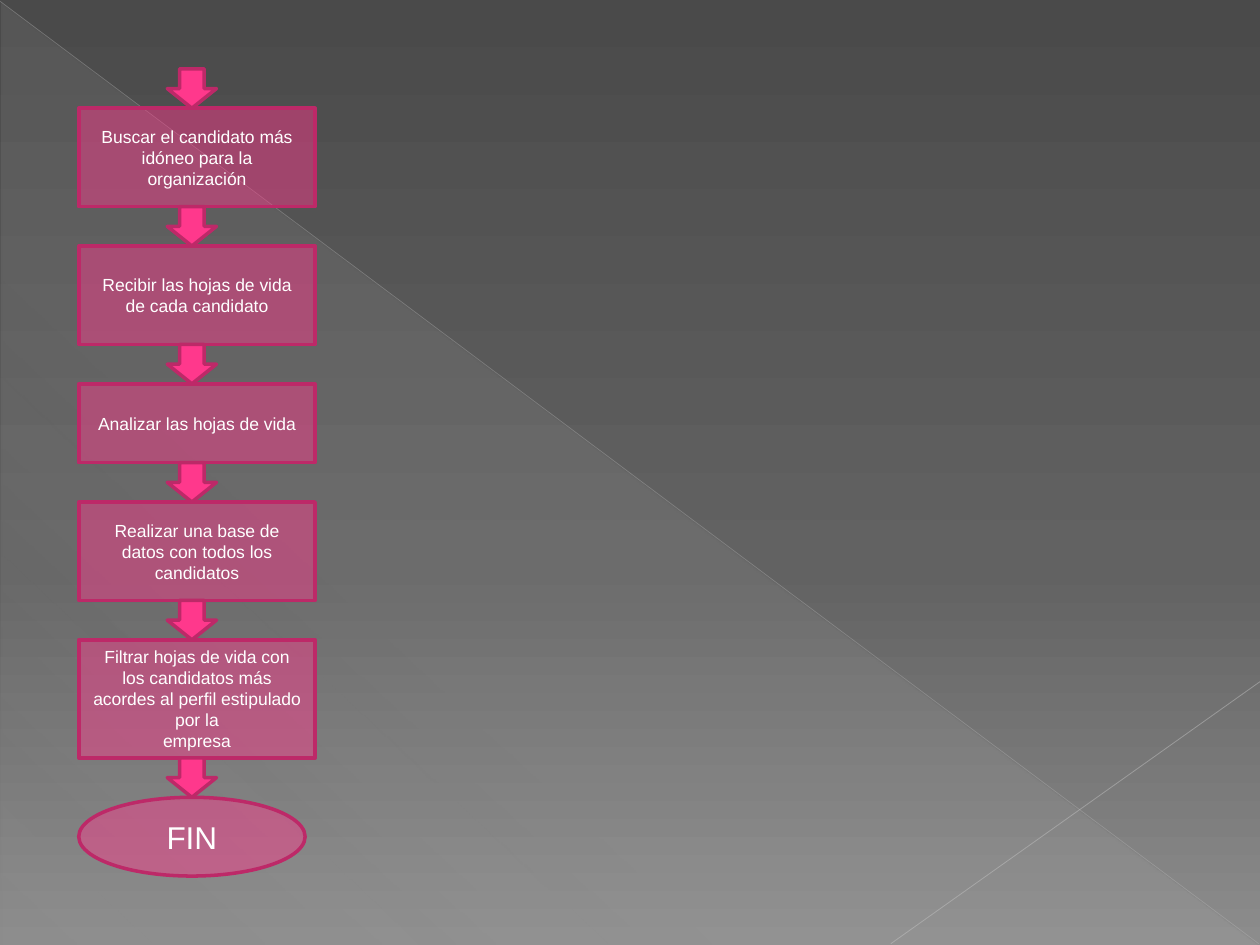
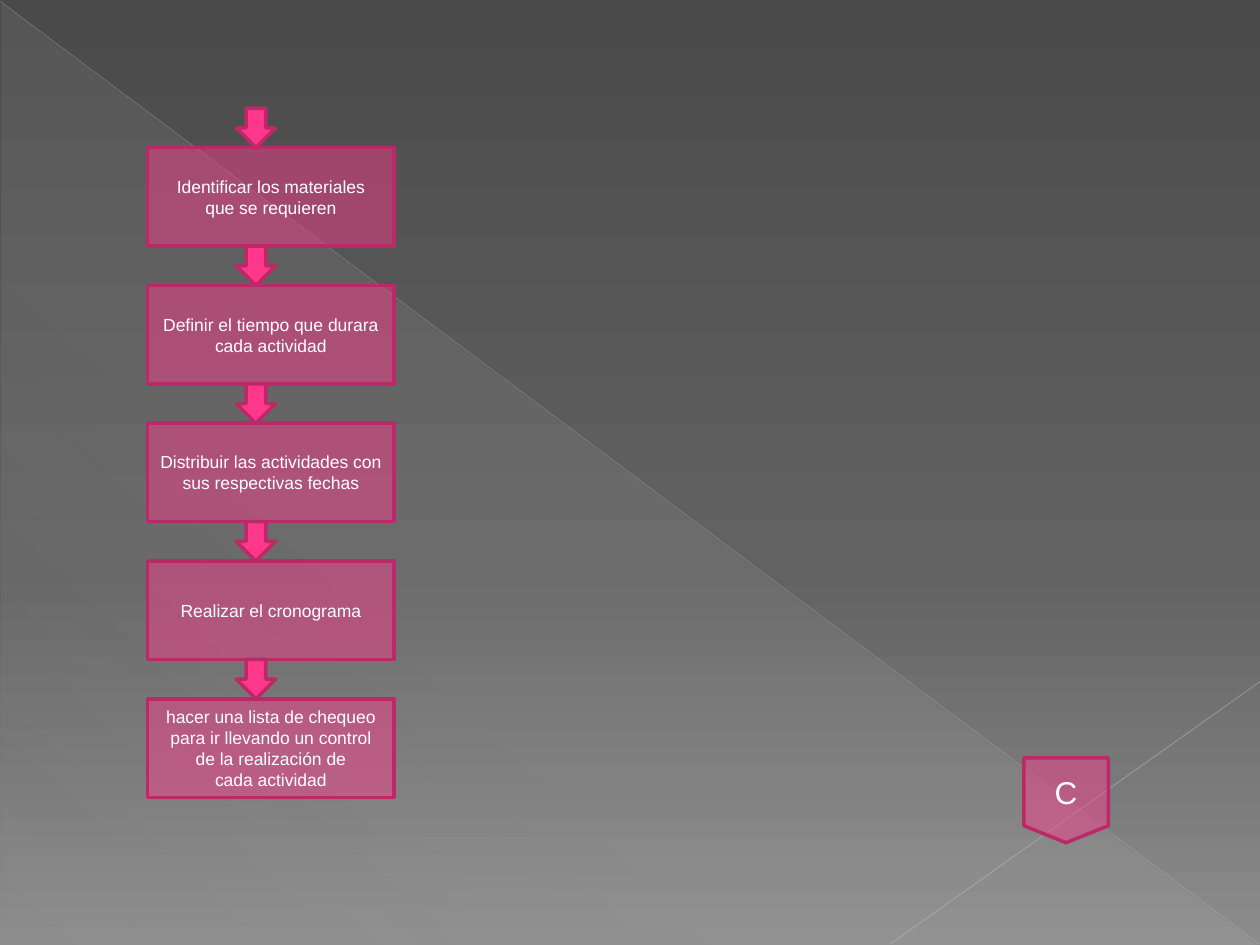
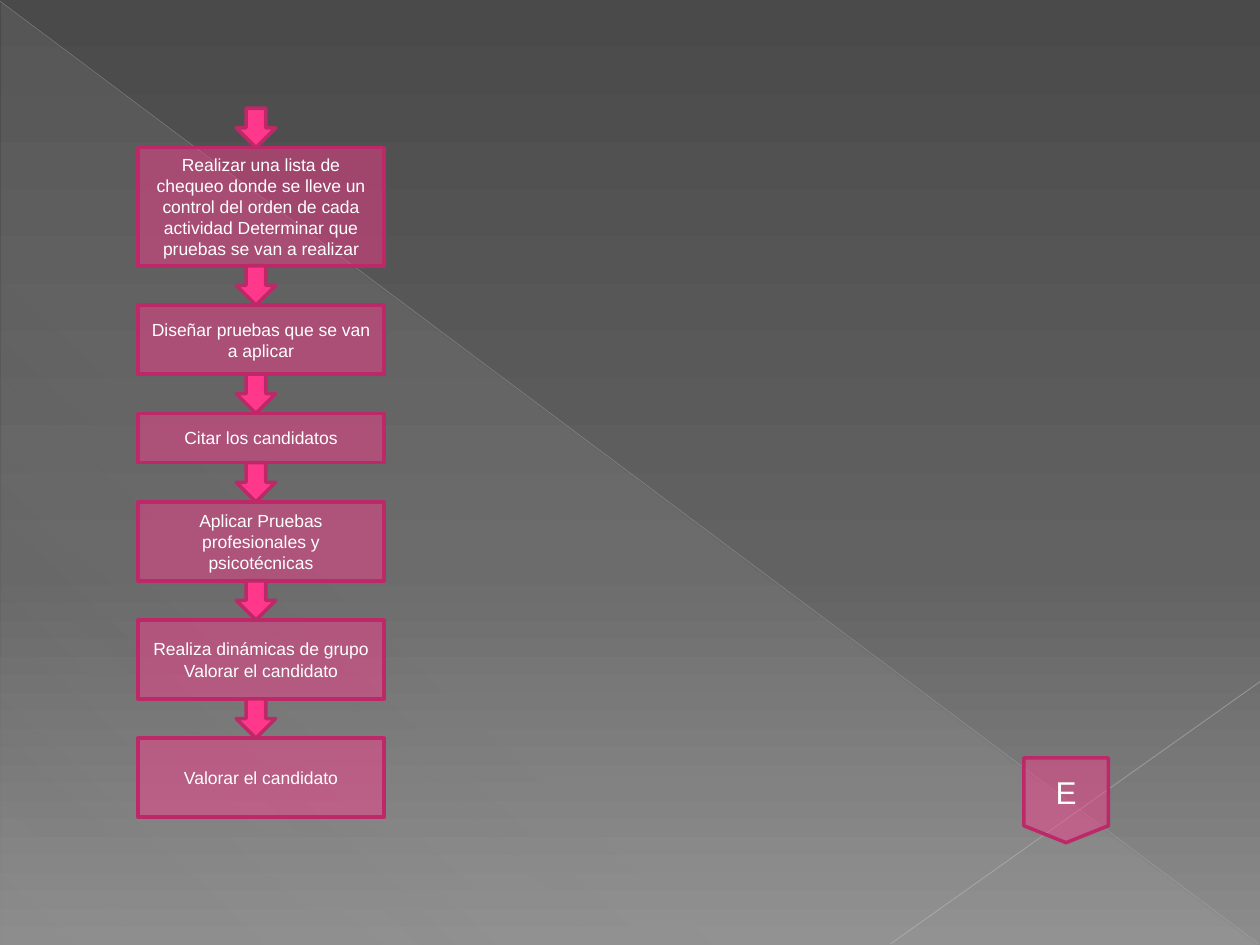
from lxml import etree
from pptx import Presentation
from pptx import util as u
from pptx.dml.color import RGBColor
from pptx.enum import shapes, text
from pptx.oxml.ns import qn

PINK, DARK_PINK, WHITE = "FF388C", "BD2968", "FFFFFF"
BOX_OPACITY = 46
GRID = 10 / 128  # inches per layout unit
ARROW_HEIGHT = 4  # layout units

PROCESS = shapes.MSO_SHAPE.FLOWCHART_PROCESS
OVAL = shapes.MSO_SHAPE.FLOWCHART_CONNECTOR
OFFPAGE = shapes.MSO_SHAPE.FLOWCHART_OFFPAGE_CONNECTOR
ARROW = shapes.MSO_SHAPE.DOWN_ARROW

# Each flow is placed in layout units; a step is (height, wording)
FLOWS = [
    {"top": 7, "box_left": 8, "box_width": 24, "arrow_left": 17, "arrow_width": 5,
     "end": "FIN", "page_mark": None,
     "steps": [
         (10, "Buscar el candidato más idóneo para la organización"),
         (10, "Recibir las hojas de vida de cada candidato"),
         (8, "Analizar las hojas de vida"),
         (10, "Realizar una base de datos con todos los candidatos"),
         (12, "Filtrar hojas de vida con los candidatos más acordes al perfil "
              "estipulado por la\nempresa"),
     ]},
    {"top": 11, "box_left": 15, "box_width": 25, "arrow_left": 24, "arrow_width": 4,
     "end": None, "page_mark": "C",
     "steps": [
         (10, "Identificar los materiales que se requieren"),
         (10, "Definir el tiempo que durara cada actividad"),
         (10, "Distribuir las actividades con sus respectivas fechas"),
         (10, "Realizar el cronograma"),
         (10, "hacer una lista de chequeo para ir llevando un control de la "
              "realización de\ncada actividad"),
     ]},
    {"top": 11, "box_left": 14, "box_width": 25, "arrow_left": 24, "arrow_width": 4,
     "end": None, "page_mark": "E",
     "steps": [
         (12, "Realizar una lista de chequeo donde se lleve un control del orden "
              "de cada\nactividad Determinar que pruebas se van a realizar"),
         (7, "Diseñar pruebas que se van a aplicar"),
         (5, "Citar los candidatos"),
         (8, "Aplicar Pruebas profesionales y psicotécnicas"),
         (8, "Realiza dinámicas de grupo Valorar el candidato"),
         (8, "Valorar el candidato"),
     ]},
]


def paint(fill, stops, angle=0):
    """Fill with one (color, opacity), or a gradient of (color, opacity, position)."""
    if len(stops) == 1:
        fill.solid()
        fill.fore_color.rgb = RGBColor.from_string(stops[0][0])
        colors = [fill._xPr.find(qn("a:solidFill"))[0]]
    else:
        fill.gradient()
        fill.gradient_angle = 360 - angle
        stop_list = fill._xPr.find(qn("a:gradFill")).find(qn("a:gsLst"))
        stop_list.clear()
        colors = []
        for color, opacity, position in stops:
            stop = etree.SubElement(stop_list, qn("a:gs"), pos=str(position * 1000))
            colors.append(etree.SubElement(stop, qn("a:srgbClr"), val=color))
    for element, stop in zip(colors, stops):
        if stop[1] < 100:
            etree.SubElement(element, qn("a:alpha"), val=str(stop[1] * 1000))


def add_node(slide, kind, left, top, width, height, opacity=100, wording="", size=10):
    """Add a pink flowchart shape; lengths are in layout units."""
    box = [u.Inches(value * GRID) for value in (left, top, width, height)]
    shape = slide.shapes.add_shape(kind, *box)
    shape.shadow.inherit = False
    paint(shape.fill, [(PINK, opacity)])
    paint(shape.line.fill, [(DARK_PINK, 100)])
    shape.line.width = u.Pt(2)
    if wording:
        frame = shape.text_frame
        frame.text = wording
        frame.word_wrap = True
        frame.vertical_anchor = text.MSO_ANCHOR.MIDDLE
        for paragraph in frame.paragraphs:
            paragraph.alignment = text.PP_ALIGN.CENTER
            for name, value in {"name": "Arial", "size": u.Pt(size)}.items():
                setattr(paragraph.font, name, value)
            paint(paragraph.font.fill, [(WHITE, 100)])


presentation = Presentation()
presentation.slide_width = u.Inches(10)
presentation.slide_height = u.Inches(7.5)
blank = presentation.slide_layouts[6]
slides = [presentation.slides.add_slide(blank) for flow in FLOWS]

# Shared background
master = presentation.slide_master
paint(master.background.fill,
      [("4A4A4A", 100, 0), ("626262", 100, 60), ("8C8C8C", 100, 100)], 90)

# Shared triangle and diagonals, drawn once and moved to the master
triangle = slides[0].shapes.add_shape(
    shapes.MSO_SHAPE.RIGHT_TRIANGLE,
    u.Inches(0.01), u.Inches(0.02), u.Inches(9.98), u.Inches(7.48))
triangle.shadow.inherit = False
triangle.line.fill.background()
paint(triangle.fill, [("D2D2D2", 10, 0), ("D2D2D2", 8, 70), ("D2D2D2", 1, 100)], 133)
decorations = [triangle]
for ends, color, width, opacity in [
    ((0, 0.01, 9.99, 7.49), "BFBFBF", 0.39, 35),
    ((10, 5.41, 7.07, 7.49), "C6C6C6", 0.47, 45),
]:
    diagonal = slides[0].shapes.add_connector(
        shapes.MSO_CONNECTOR.STRAIGHT, *[u.Inches(value) for value in ends])
    paint(diagonal.line.fill, [(color, opacity)])
    diagonal.line.width = u.Pt(width)
    etree.SubElement(diagonal.element.spPr, qn("a:effectLst"))
    decorations.append(diagonal)
for number, decoration in enumerate(decorations, start=101):
    decoration.element.xpath(".//p:cNvPr")[0].set("id", str(number))
    master.shapes.element.append(decoration.element)

# Flowcharts
for slide, flow in zip(slides, FLOWS):
    left, width = flow["box_left"], flow["box_width"]
    nodes = [(PROCESS, width, height, wording, 10) for height, wording in flow["steps"]]
    if flow["end"]:
        nodes.append((OVAL, 23, 8, flow["end"], 18))

    # An arrow leads into every node
    top = flow["top"]
    for kind, node_width, height, wording, size in nodes:
        add_node(slide, ARROW, flow["arrow_left"], top, flow["arrow_width"], ARROW_HEIGHT)
        top += ARROW_HEIGHT
        add_node(slide, kind, left, top, node_width, height, BOX_OPACITY, wording, size)
        top += height

    # Off-page mark
    if flow["page_mark"]:
        add_node(slide, OFFPAGE, 104, 77, 8.6, 8.6, BOX_OPACITY, flow["page_mark"], 18)

presentation.save("out.pptx")
